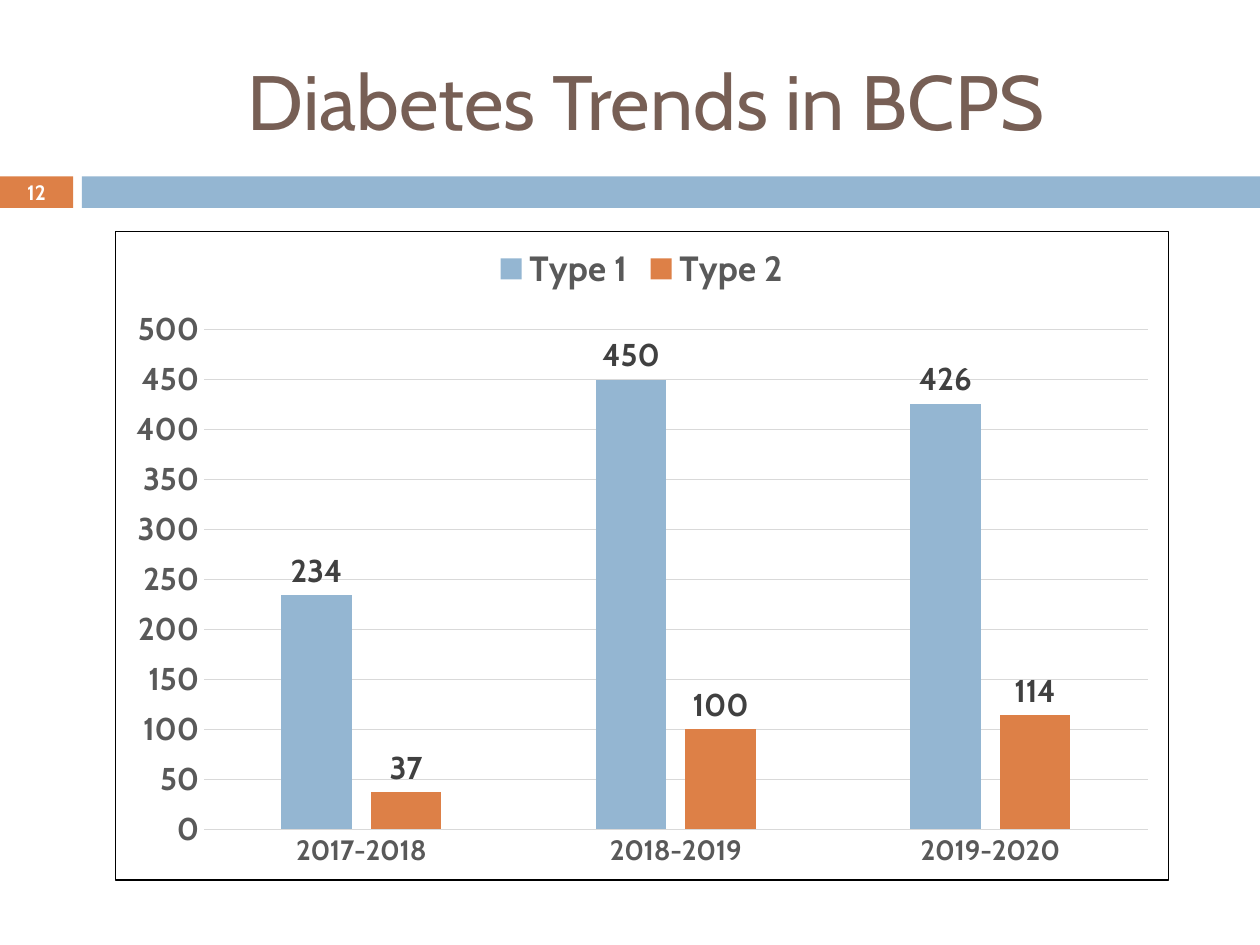
from dataclasses import dataclass

from lxml.etree import fromstring
from pptx import Presentation
from pptx.chart.data import CategoryChartData
from pptx.dml.color import RGBColor
from pptx.enum.chart import XL_CHART_TYPE, XL_LABEL_POSITION, XL_LEGEND_POSITION, XL_TICK_MARK
from pptx.enum.shapes import MSO_SHAPE
from pptx.enum.text import MSO_ANCHOR, PP_ALIGN
from pptx.oxml.ns import nsdecls
from pptx.util import Pt

FONT = "Cabin"
BLUE = "94B6D2"
ORANGE = "DD8047"
BROWN = "775F55"
WHITE = "FFFFFF"
BLACK = "000000"
AXIS_GRAY = "595959"
LABEL_GRAY = "404040"
GRID_GRAY = "D9D9D9"


@dataclass
class Box:
    left: float
    top: float
    width: float
    height: float

    def lengths(self) -> tuple:
        return Pt(self.left), Pt(self.top), Pt(self.width), Pt(self.height)


@dataclass
class Band:
    box: Box
    color: str


@dataclass
class Label:
    box: Box
    text: str
    size: float
    color: str
    bold: bool = False


@dataclass
class Series:
    name: str
    values: tuple
    color: str


BANDS = [
    Band(Box(0, 100.8, 41.76, 18), ORANGE),
    Band(Box(46.8, 100.8, 673.2, 18), BLUE),
]
LABELS = [
    Label(Box(48.24, 18, 642.24, 77.76), "Diabetes Trends in BCPS", 44, BROWN),
    Label(Box(0, 100.08, 41.76, 19.44), "12", 11.9, WHITE, True),
]
CHART_BOX = Box(65.52, 131.76, 602.64, 371.52)
YEARS = ["2017-2018", "2018-2019", "2019-2020"]
SERIES = [
    Series("Type 1", (234, 450, 426), BLUE),
    Series("Type 2", (37, 100, 114), ORANGE),
]


def rgb(color: str) -> RGBColor:
    return RGBColor.from_string(color)


def style_font(font, size: float, color: str, bold: bool = False) -> None:
    font.name = FONT
    font.size = Pt(size)
    font.bold = bold
    font.color.rgb = rgb(color)


def style_line(line, color: str) -> None:
    line.color.rgb = rgb(color)
    line.width = Pt(0.75)


def add_band(s, band: Band) -> None:
    sp = s.shapes.add_shape(MSO_SHAPE.RECTANGLE, *band.box.lengths())
    sp.shadow.inherit = False
    sp.fill.solid()
    sp.fill.fore_color.rgb = rgb(band.color)
    sp.line.fill.background()


def add_label(s, label: Label) -> None:
    tf = s.shapes.add_textbox(*label.box.lengths()).text_frame
    tf.word_wrap = True
    tf.vertical_anchor = MSO_ANCHOR.MIDDLE
    tf.margin_left = tf.margin_right = tf.margin_top = tf.margin_bottom = 0
    tf.text = label.text
    p = tf.paragraphs[0]
    p.alignment = PP_ALIGN.CENTER
    style_font(p.runs[0].font, label.size, label.color, label.bold)


def add_border(chart, color: str) -> None:
    border = fromstring(
        f'<c:spPr {nsdecls("c", "a")}><a:noFill/><a:ln w="{Pt(0.75)}"><a:solidFill>'
        f'<a:srgbClr val="{color}"/></a:solidFill></a:ln></c:spPr>'
    )
    chart.element.chart.addnext(border)


def style_axes(chart) -> None:
    for axis, size in ((chart.category_axis, 16), (chart.value_axis, 18)):
        axis.major_tick_mark = axis.minor_tick_mark = XL_TICK_MARK.NONE
        style_font(axis.tick_labels.font, size, AXIS_GRAY, True)
    style_line(chart.category_axis.format.line, GRID_GRAY)
    values = chart.value_axis
    values.minimum_scale, values.maximum_scale, values.major_unit = 0, 500, 50
    values.format.line.fill.background()
    style_line(values.major_gridlines.format.line, GRID_GRAY)


def style_series(series, color: str) -> None:
    series.format.fill.solid()
    series.format.fill.fore_color.rgb = rgb(color)
    series.invert_if_negative = False
    labels = series.data_labels
    labels.show_value = True
    labels.position = XL_LABEL_POSITION.OUTSIDE_END
    style_font(labels.font, 18, LABEL_GRAY, True)


def add_trend_chart(s) -> None:
    data = CategoryChartData()
    data.categories = YEARS
    for item in SERIES:
        data.add_series(item.name, item.values)
    chart = s.shapes.add_chart(
        XL_CHART_TYPE.COLUMN_CLUSTERED, *CHART_BOX.lengths(), data
    ).chart
    style_font(chart.font, 10, BLACK)
    chart.has_title = False
    chart.has_legend = True
    chart.legend.position = XL_LEGEND_POSITION.TOP
    chart.legend.include_in_layout = False
    style_font(chart.legend.font, 20, AXIS_GRAY, True)
    plot = chart.plots[0]
    plot.vary_by_categories = False
    plot.gap_width = 219
    plot.overlap = -27
    for series, item in zip(plot.series, SERIES):
        style_series(series, item.color)
    style_axes(chart)
    add_border(chart, BLACK)


def main() -> None:
    prs = Presentation()
    prs.slide_width, prs.slide_height = Pt(720), Pt(540)
    s = prs.slides.add_slide(prs.slide_layouts[6])
    for band in BANDS:
        add_band(s, band)
    add_trend_chart(s)
    for label in LABELS:
        add_label(s, label)
    prs.save("out.pptx")


if __name__ == "__main__":
    main()
